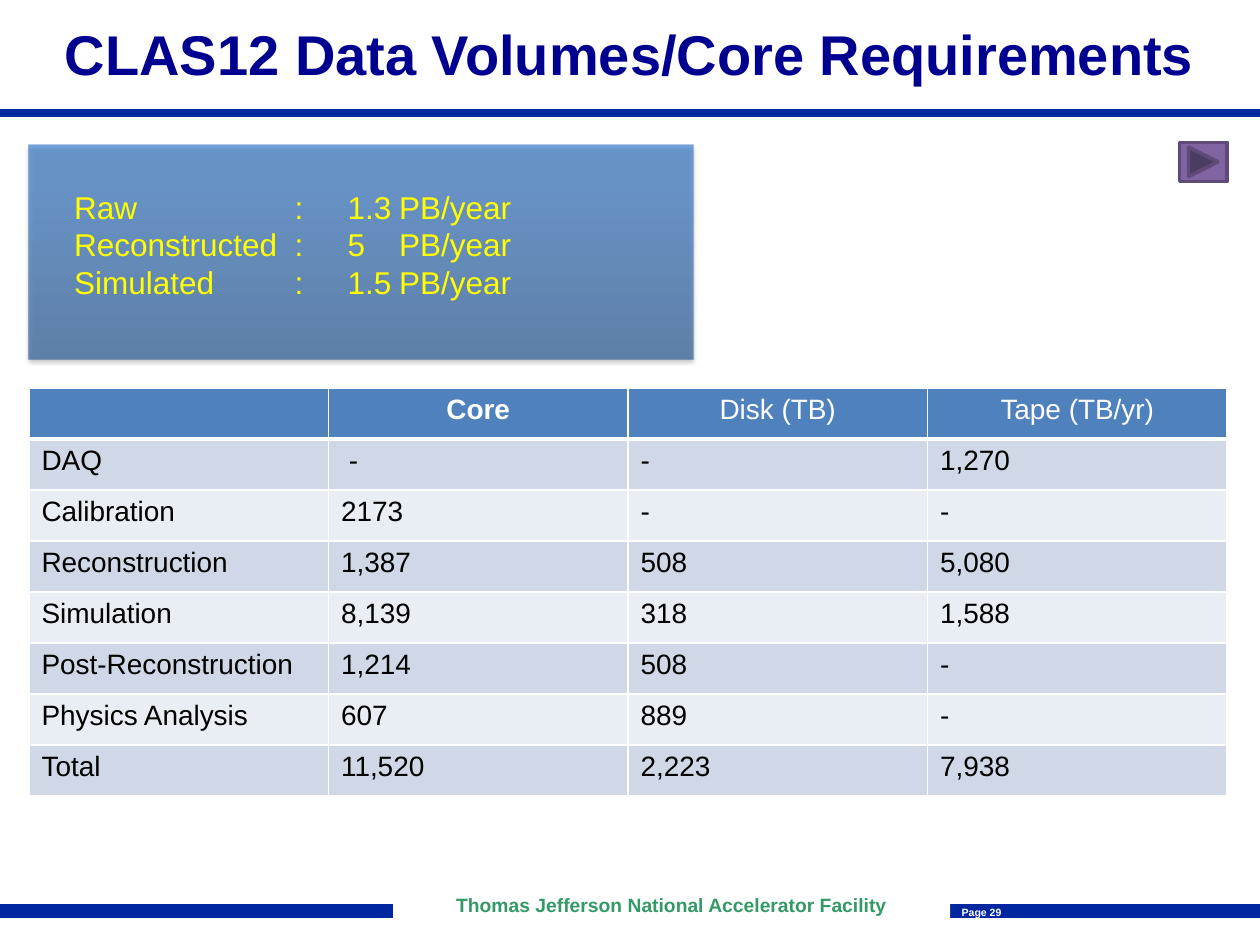
from lxml import etree
from pptx import Presentation
from pptx.dml.color import RGBColor
from pptx.enum import shapes, text
from pptx.oxml import parse_xml
from pptx.oxml.ns import nsdecls, qn
from pptx.util import Inches, Pt

COLORS = {
    "bar": "00279F", "white": "FFFFFF", "black": "000000", "title": "000090",
    "lab": "339966", "summary": "FFFF00", "header": "4F81BD",
    "odd": "D0D8E8", "even": "E9EDF4", "button": "8064A2", "button_edge": "5F4A78",
}
FONT = "Arial"

TITLE = "CLAS12 Data Volumes/Core Requirements"
LAB = "Thomas Jefferson National Accelerator Facility"
PAGE_LABEL = "Page 29"
VOLUMES = [("Raw", "1.3", "PB/year"), ("Reconstructed", "5", "PB/year"),
           ("Simulated", "1.5", "PB/year")]
VOLUME_TABS = (1.75, 2.17, 2.58)
REQUIREMENTS = [
    ("", "Core", "Disk (TB)", "Tape (TB/yr)"),
    ("DAQ", " -", "-", "1,270"),
    ("Calibration", "2173", "-", "-"),
    ("Reconstruction", "1,387", "508", "5,080"),
    ("Simulation", "8,139", "318", "1,588"),
    ("Post-Reconstruction", "1,214", "508", "-"),
    ("Physics Analysis", "607", "889", "-"),
    ("Total", "11,520", "2,223", "7,938"),
]
PANEL_STOPS = [(0, "2F5F99"), (80, "3D7CC7"), (100, "3A7CCB")]
PANEL_ALPHA = 67

deck = Presentation()
deck.slide_width, deck.slide_height = Inches(10), Inches(7.5)
page = deck.slides.add_slide(deck.slide_layouts[6])


def color(name):
    return RGBColor.from_string(COLORS[name])


def inches(*lengths):
    return [Inches(length) for length in lengths]


def write(para, words, size, ink, bold=False, align=text.PP_ALIGN.LEFT):
    para.alignment = align
    span = para.add_run()
    span.text = words
    span.font.name, span.font.size, span.font.bold = FONT, Pt(size), bold
    span.font.color.rgb = color(ink)


def set_insets(frame, inset):
    frame.margin_left = frame.margin_right = Inches(inset)
    frame.margin_top = frame.margin_bottom = Inches(inset)


def add_text_frame(*place, wrap=True):
    frame = page.shapes.add_textbox(*inches(*place)).text_frame
    frame.word_wrap = wrap
    return frame


def add_shape(preset, *place):
    shape = page.shapes.add_shape(preset, *inches(*place))
    shape.shadow.inherit = False
    return shape


def add_border(cell, sides):
    properties = cell._tc.get_or_add_tcPr()
    for position, (side, width) in enumerate(sides):
        properties.insert(position, parse_xml(
            f'<a:ln{side} {nsdecls("a")} w="{Pt(width)}"><a:solidFill>'
            f'<a:srgbClr val="{COLORS["white"]}"/></a:solidFill></a:ln{side}>'))


# Top and bottom bars
for y, width in ((0.9, 4.5), (7.23, 8)):
    bar = page.shapes.add_connector(shapes.MSO_CONNECTOR.STRAIGHT, *inches(0, y, 10, y))
    bar.line.color.rgb, bar.line.width = color("bar"), Pt(width)
    etree.SubElement(bar._element.spPr, qn("a:effectLst"))

# Footer
footer = add_shape(shapes.MSO_SHAPE.RECTANGLE, 3.12, 6.97, 4.42, 0.42)
footer.fill.solid()
footer.fill.fore_color.rgb = color("white")
footer.line.fill.background()
set_insets(footer.text_frame, 0)
footer.text_frame.vertical_anchor = text.MSO_ANCHOR.MIDDLE
write(footer.text_frame.paragraphs[0], LAB, 11, "lab", True, text.PP_ALIGN.CENTER)

page_number = add_text_frame(7.63, 7.19, 0.32, 0.1, wrap=False)
set_insets(page_number, 0)
write(page_number.paragraphs[0], PAGE_LABEL, 6, "white", True, text.PP_ALIGN.CENTER)

# Summary panel with a translucent gradient and a soft shadow
panel = add_shape(shapes.MSO_SHAPE.RECTANGLE, 0.23, 1.15, 5.27, 1.7)
panel.line.fill.background()
stops = "".join(
    f'<a:gs pos="{place * 1000}"><a:srgbClr val="{tone}">'
    f'<a:alpha val="{PANEL_ALPHA * 1000}"/></a:srgbClr></a:gs>'
    for place, tone in PANEL_STOPS)
panel._element.spPr.find(qn("a:prstGeom")).addnext(parse_xml(
    f'<a:gradFill {nsdecls("a")} rotWithShape="1"><a:gsLst>{stops}</a:gsLst>'
    '<a:lin ang="16200000" scaled="0"/></a:gradFill>'))
panel._element.spPr.find(qn("a:effectLst")).append(parse_xml(
    f'<a:outerShdw {nsdecls("a")} blurRad="{Pt(3.1)}" dist="{Pt(1.8)}" dir="5400000" '
    f'rotWithShape="0"><a:srgbClr val="{COLORS["black"]}"><a:alpha val="35000"/>'
    '</a:srgbClr></a:outerShdw>'))

# Title
title = add_text_frame(0, 0.11, 10, 0.64)
write(title.paragraphs[0], TITLE, 32, "title", True, text.PP_ALIGN.CENTER)

# Data volumes, aligned on tab stops
volumes = add_text_frame(0.49, 1.44, 4.51, 1.01)
for index, (name, amount, unit) in enumerate(VOLUMES):
    para = volumes.add_paragraph() if index else volumes.paragraphs[0]
    tabs = etree.SubElement(para._p.get_or_add_pPr(), qn("a:tabLst"))
    for stop in VOLUME_TABS:
        etree.SubElement(tabs, qn("a:tab"), pos=str(Inches(stop)), algn="l")
    write(para, "\t".join((name, ":", amount, unit)), 18, "summary")

# Requirements table
row_count, column_count = len(REQUIREMENTS), len(REQUIREMENTS[0])
table = page.shapes.add_table(row_count, column_count,
                              *inches(0.23, 3.08, 9.51, 3.24)).table
for row, values in enumerate(REQUIREMENTS):
    is_header = row == 0
    for column, value in enumerate(values):
        cell = table.cell(row, column)
        cell.fill.solid()
        cell.fill.fore_color.rgb = color(
            "header" if is_header else "odd" if row % 2 else "even")
        add_border(cell, [("L", 1), ("R", 1), ("T", 1), ("B", 3 if is_header else 1)])
        if value:
            write(cell.text_frame.paragraphs[0], value, 16,
                  "white" if is_header else "black", value == "Core",
                  text.PP_ALIGN.CENTER if is_header else text.PP_ALIGN.LEFT)

# Forward button
button = add_shape(shapes.MSO_SHAPE.ACTION_BUTTON_FORWARD_OR_NEXT, 9.36, 1.13, 0.38, 0.31)
button.fill.solid()
button.fill.fore_color.rgb = color("button")
button.line.color.rgb, button.line.width = color("button_edge"), Pt(2)

deck.save("out.pptx")
